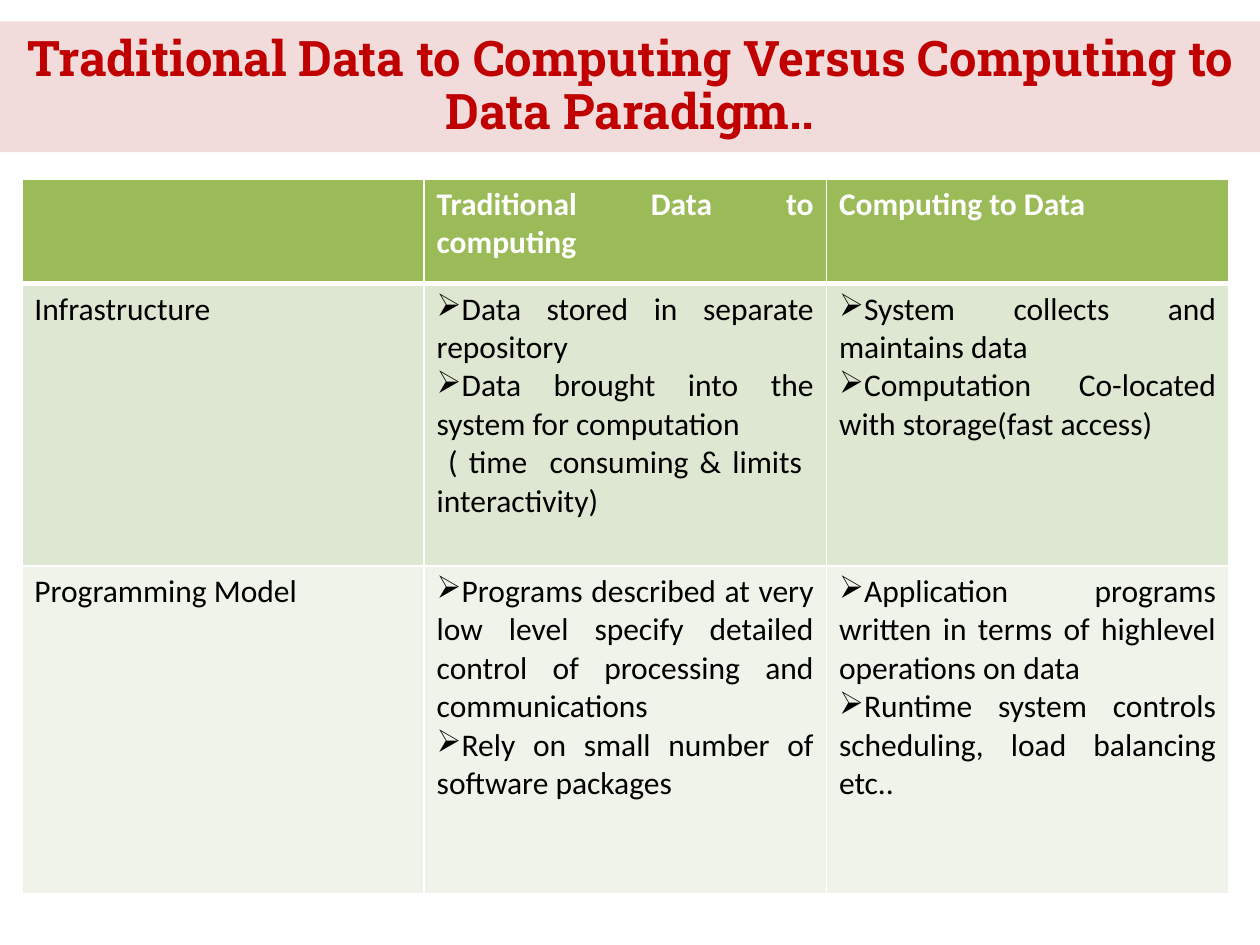
from lxml import etree
from pptx import Presentation
from pptx import util as u
from pptx.dml.color import RGBColor
from pptx.enum import text
from pptx.oxml.ns import qn

COLORS = {
    "title": "C00000",
    "title_band": "F2DCDB",
    "header": "9BBB59",
    "infrastructure": "DEE7D1",
    "programming": "EFF3EA",
    "white": "FFFFFF",
    "black": "000000",
}
BULLET = "➢"

# Row fill, row height in cm, and the paragraphs of each cell;
# a paragraph that starts with the bullet sign becomes a real bullet.
ROWS = [
    ("header", 2.11, [
        [],
        ["Traditional Data to computing"],
        ["Computing to Data"],
    ]),
    ("infrastructure", 5.69, [
        ["Infrastructure"],
        ["➢Data stored in separate repository",
         "➢Data brought into the system for computation",
         " ( time  consuming & limits  interactivity)"],
        ["➢System collects and maintains data",
         "➢Computation Co-located with storage(fast access)"],
    ]),
    ("programming", 6.6, [
        ["Programming Model"],
        ["➢Programs described at very low level specify detailed control of "
         "processing and communications",
         "➢Rely on small number of software packages"],
        ["➢Application programs written in terms of highlevel operations on data",
         "➢Runtime system controls scheduling, load balancing etc.."],
    ]),
]


def style_run(run, font_name, size, color, bold):
    run.font.name = font_name
    run.font.size = u.Pt(size)
    run.font.bold = bold
    run.font.color.rgb = RGBColor.from_string(COLORS[color])


def add_borders(cell, bottom_width):
    """Draw white lines around a cell; must run before the cell is filled."""
    properties = cell._tc.get_or_add_tcPr()
    for side, width in (("lnL", 1), ("lnR", 1), ("lnT", 1), ("lnB", bottom_width)):
        line = etree.SubElement(properties, qn(f"a:{side}"), w=str(u.Pt(width)))
        fill = etree.SubElement(line, qn("a:solidFill"))
        etree.SubElement(fill, qn("a:srgbClr"), val=COLORS["white"])


presentation = Presentation()
presentation.slide_width = u.Cm(25.4)
presentation.slide_height = u.Cm(19.05)
slide = presentation.slides.add_slide(presentation.slide_layouts[5])

# Title band
title = slide.shapes.title
title.left, title.top = u.Cm(0), u.Cm(0.43)
title.width, title.height = u.Cm(25.4), u.Cm(2.64)
title.fill.solid()
title.fill.fore_color.rgb = RGBColor.from_string(COLORS["title_band"])
title.text_frame.text = "Traditional Data to Computing Versus Computing to Data Paradigm.."
title.text_frame.word_wrap = True
title.text_frame.auto_size = text.MSO_AUTO_SIZE.NONE
title.text_frame.vertical_anchor = text.MSO_ANCHOR.MIDDLE
paragraph = title.text_frame.paragraphs[0]
paragraph.alignment = text.PP_ALIGN.CENTER
paragraph.line_spacing = 0.9
style_run(paragraph.runs[0], "Roboto Slab", 28, "title", True)

# Comparison table
table_height = sum(height for _, height, _ in ROWS)
table = slide.shapes.add_table(
    len(ROWS), 3, u.Cm(0.44), u.Cm(3.61), u.Cm(24.33), u.Cm(table_height)).table

for row_index, (fill, height, cells) in enumerate(ROWS):
    is_header = row_index == 0
    table.rows[row_index].height = u.Cm(height)
    for column_index, lines in enumerate(cells):
        cell = table.cell(row_index, column_index)
        add_borders(cell, 3 if is_header else 1)
        cell.fill.solid()
        cell.fill.fore_color.rgb = RGBColor.from_string(COLORS[fill])
        cell.text_frame.text = "\n".join(line.removeprefix(BULLET) for line in lines)
        for line, paragraph in zip(lines, cell.text_frame.paragraphs):
            paragraph.alignment = text.PP_ALIGN.JUSTIFY
            if line.startswith(BULLET):
                etree.SubElement(paragraph._p.get_or_add_pPr(), qn("a:buChar"), char=BULLET)
            style_run(paragraph.runs[0], "Calibri", 18,
                      "white" if is_header else "black", is_header)

presentation.save("out.pptx")
